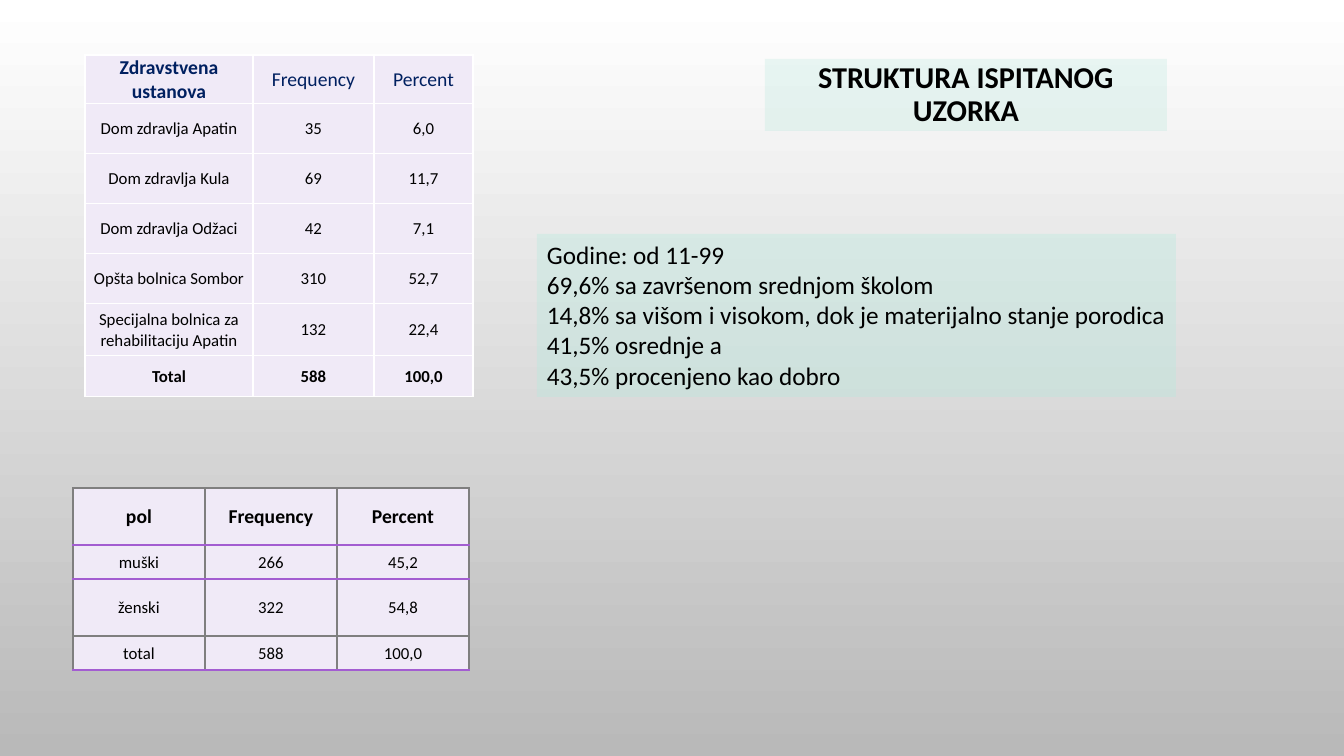
from lxml import etree
from pptx import Presentation, util as u
from pptx.dml.color import RGBColor
from pptx.enum import shapes, text
from pptx.oxml.ns import qn

PX = 12192000 / 1344
FONT = "Calibri"
BLACK = RGBColor(0x00, 0x00, 0x00)
WHITE = RGBColor(0xFF, 0xFF, 0xFF)
GREY = RGBColor(0x7F, 0x7F, 0x7F)
BACKDROP_END = RGBColor(0xB9, 0xB9, 0xB9)
NAVY = RGBColor(0x00, 0x20, 0x60)
LILAC = RGBColor(0xF0, 0xEA, 0xF7)
PURPLE = RGBColor(0xA3, 0x5D, 0xD1)
TITLE_MINT = RGBColor(0x93, 0xDF, 0xCE)
NOTES_MINT = RGBColor(0xB7, 0xEA, 0xDE)

INSTITUTIONS = [
    ("Zdravstvena ustanova", "Frequency", "Percent"),
    ("Dom zdravlja Apatin", "35", "6,0"),
    ("Dom zdravlja Kula", "69", "11,7"),
    ("Dom zdravlja Odžaci", "42", "7,1"),
    ("Opšta bolnica Sombor", "310", "52,7"),
    ("Specijalna bolnica za rehabilitaciju Apatin", "132", "22,4"),
    ("Total", "588", "100,0"),
]
GENDERS = [
    ("pol", "Frequency", "Percent"),
    ("muški", "266", "45,2"),
    ("ženski", "322", "54,8"),
    ("total", "588", "100,0"),
]
FINDINGS = [
    "Godine: od 11-99",
    "69,6% sa završenom srednjom školom",
    "14,8% sa višom i visokom, dok je materijalno stanje porodica",
    "41,5% osrednje a",
    "43,5% procenjeno kao dobro",
]


def px(length):
    return u.Emu(round(length * PX))


def add_run(paragraph, words, size, color=BLACK, bold=False):
    run = paragraph.add_run()
    run.text = words
    run.font.name = FONT
    run.font.size = u.Pt(size)
    run.font.bold = bold
    run.font.color.rgb = color


def paint_background(slide):
    fill = slide.background.fill
    fill.gradient()
    fill.gradient_angle = 270
    for stop, color, position in zip(fill.gradient_stops, (WHITE, BACKDROP_END), (0, 1)):
        stop.color.rgb = color
        stop.position = position


def add_panel(slide, box, color, opacity):
    """Add a translucent rectangle and return its text frame."""
    panel = slide.shapes.add_shape(shapes.MSO_SHAPE.RECTANGLE, *map(px, box))
    panel.shadow.inherit = False
    panel.line.fill.background()
    panel.fill.solid()
    panel.fill.fore_color.rgb = color
    tint = panel.fill._xPr.find(".//" + qn("a:srgbClr"))
    etree.SubElement(tint, qn("a:alpha"), val=str(opacity * 1000))
    return panel.text_frame


def add_title(slide, box):
    frame = add_panel(slide, box, TITLE_MINT, 18)
    frame.word_wrap = True
    frame.vertical_anchor = text.MSO_ANCHOR.MIDDLE
    paragraph = frame.paragraphs[0]
    paragraph.alignment = text.PP_ALIGN.CENTER
    paragraph.line_spacing = 0.9
    add_run(paragraph, "STRUKTURA ISPITANOG UZORKA", 21.6, bold=True)


def add_findings(slide, box):
    frame = add_panel(slide, box, NOTES_MINT, 36)
    frame.word_wrap = False
    frame.vertical_anchor = text.MSO_ANCHOR.TOP
    for index, finding in enumerate(FINDINGS):
        paragraph = frame.add_paragraph() if index else frame.paragraphs[0]
        paragraph.alignment = text.PP_ALIGN.LEFT
        add_run(paragraph, finding, 18)


def set_borders(cell, upright, top, bottom):
    """Draw the cell's edges; they must come before its fill in the XML."""
    properties = cell._tc.get_or_add_tcPr()
    for edge, color in (("L", upright), ("R", upright), ("T", top), ("B", bottom)):
        line = etree.SubElement(properties, qn("a:ln" + edge), w=str(u.Pt(1)))
        solid = etree.SubElement(line, qn("a:solidFill"))
        etree.SubElement(solid, qn("a:srgbClr"), val=str(color))


def add_frequency_table(slide, left, top, records, widths, heights, upright, rules, style):
    """rules: colours of the horizontal lines; style: (row, column) to size, colour, bold."""
    table = slide.shapes.add_table(
        len(records), len(widths), px(left), px(top), px(sum(widths)), px(sum(heights))
    ).table
    table.first_row = table.horz_banding = False
    for column, width in zip(table.columns, widths):
        column.width = px(width)
    for r, (record, height) in enumerate(zip(records, heights)):
        table.rows[r].height = px(height)
        for c, value in enumerate(record):
            cell = table.cell(r, c)
            cell.margin_left = cell.margin_right = cell.margin_top = px(1)
            cell.margin_bottom = 0
            cell.vertical_anchor = text.MSO_ANCHOR.MIDDLE
            set_borders(cell, upright, rules[r], rules[r + 1])
            cell.fill.solid()
            cell.fill.fore_color.rgb = LILAC
            paragraph = cell.text_frame.paragraphs[0]
            paragraph.alignment = text.PP_ALIGN.CENTER
            add_run(paragraph, value, *style(r, c))


def institution_style(row, column):
    if row == 0:
        return 14, NAVY, column == 0
    return 12, BLACK, row == len(INSTITUTIONS) - 1


def gender_style(row, column):
    return (14, BLACK, True) if row == 0 else (12, BLACK, False)


def build_sample_slide(slide):
    paint_background(slide)
    add_title(slide, (765, 59, 402, 72))
    add_frequency_table(
        slide, 85, 55, INSTITUTIONS, (168, 121, 99), (48, 50, 50, 50, 50, 52, 41),
        WHITE, [WHITE] * 8, institution_style,
    )
    add_frequency_table(
        slide, 73, 488, GENDERS, (132, 132, 132), (57, 34, 57, 34),
        GREY, [GREY, PURPLE, PURPLE, GREY, PURPLE], gender_style,
    )
    add_findings(slide, (537, 234, 639, 163))


def main():
    deck = Presentation()
    deck.slide_width, deck.slide_height = px(1344), px(756)
    build_sample_slide(deck.slides.add_slide(deck.slide_layouts[6]))
    deck.save("out.pptx")


if __name__ == "__main__":
    main()
